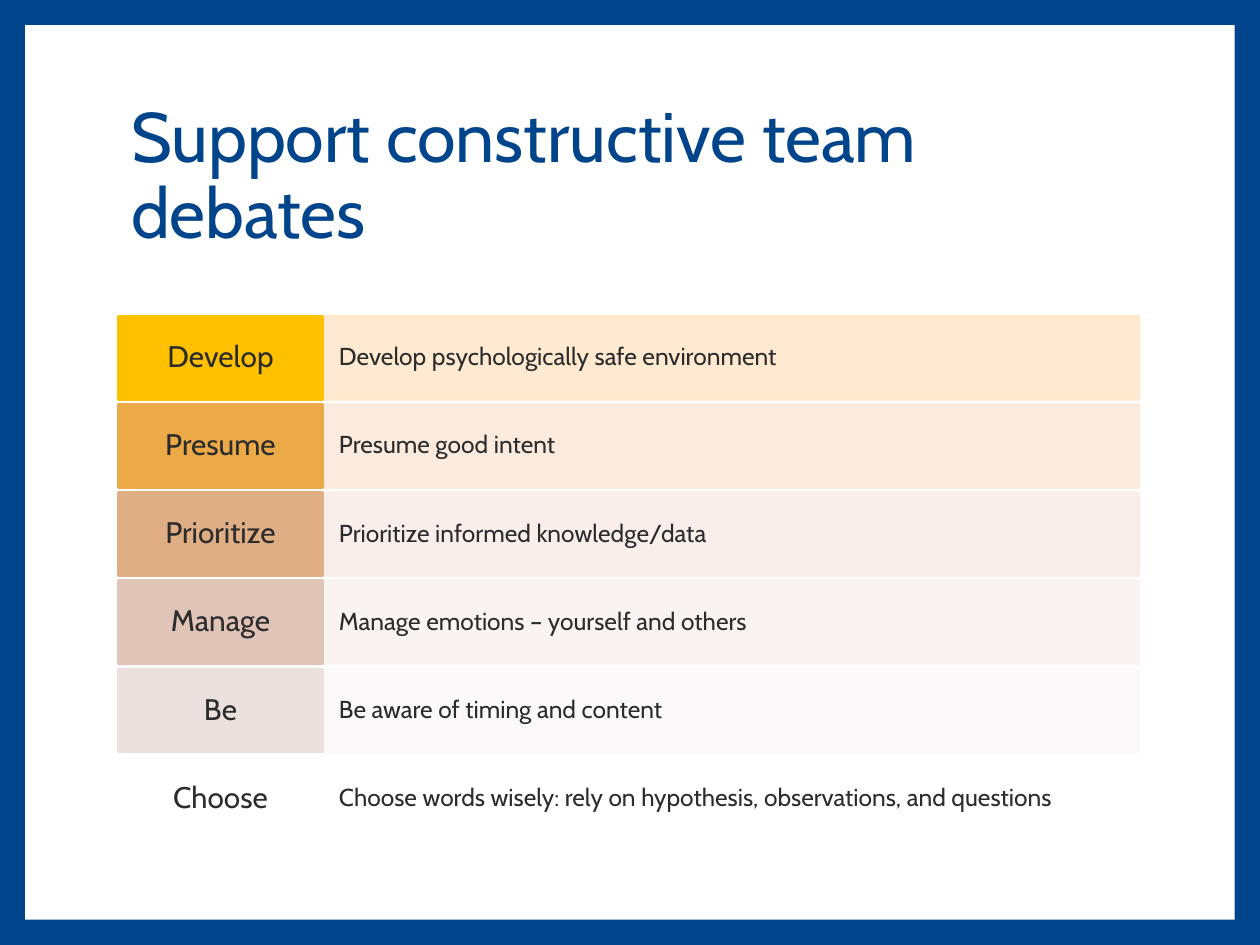
from lxml import etree
from pptx import Presentation
from pptx.dml.color import RGBColor
from pptx.enum.shapes import MSO_SHAPE
from pptx.enum.text import MSO_ANCHOR, PP_ALIGN
from pptx.oxml.ns import qn
from pptx.util import Inches, Pt

RECTANGLE = MSO_SHAPE.RECTANGLE
MIDDLE = MSO_ANCHOR.MIDDLE
LEFT, CENTER = PP_ALIGN.LEFT, PP_ALIGN.CENTER

COLORS = {"blue": "00458B", "white": "FFFFFF", "ink": "2C2C2C"}
PRACTICES = [
    ("Develop", "Develop psychologically safe environment", "FFC000", "FFE8CC"),
    ("Presume", "Presume good intent", "EBAA47", "FBE9DB"),
    ("Prioritize", "Prioritize informed knowledge/data", "E0AE85", "F9EDE7"),
    ("Manage", "Manage emotions – yourself and others", "E0C4B8", "F9F3F1"),
    ("Be", "Be aware of timing and content", "EBE2E0", "FBF9F9"),
    ("Choose", "Choose words wisely: rely on hypothesis, observations, and questions",
     COLORS["white"], COLORS["white"]),
]
MARGIN_LEFT, VERB_WIDTH, ADVICE_WIDTH = 0.94, 1.62, 6.48
ROWS_TOP, ROW_HEIGHT, ROW_PITCH = 2.51, 0.66, 0.7


class DebateSlide:
    """Holds the style and the current slide, and adds each kind of element."""

    font = "Cabin"

    def __init__(self, deck):
        self.slide = deck.slides.add_slide(deck.slide_layouts[5])

    def background(self, color):
        fill = self.slide.background.fill
        fill.solid()
        fill.fore_color.rgb = RGBColor.from_string(color)

    def set_text(self, frame, text, size, color, align, inset_x, inset_y):
        frame.word_wrap = True
        frame.vertical_anchor = MIDDLE
        frame.margin_left = frame.margin_right = Inches(inset_x)
        frame.margin_top = frame.margin_bottom = Inches(inset_y)
        paragraph = frame.paragraphs[0]
        paragraph.alignment = align
        paragraph.line_spacing = 0.9
        run = paragraph.add_run()
        run.text = text
        run.font.name = self.font
        run.font.size = Pt(size)
        run.font.color.rgb = RGBColor.from_string(color)

    def title(self, text, left, top, width, height):
        heading = self.slide.shapes.title
        heading.left, heading.top = Inches(left), Inches(top)
        heading.width, heading.height = Inches(width), Inches(height)
        self.set_text(heading.text_frame, text, 40, COLORS["blue"], LEFT, 0.1, 0.05)

    def panel(self, left, top, width, height, color):
        panel = self.slide.shapes.add_shape(
            RECTANGLE, Inches(left), Inches(top), Inches(width), Inches(height))
        panel.shadow.inherit = False
        panel.fill.solid()
        panel.fill.fore_color.rgb = RGBColor.from_string(color)
        panel.line.fill.background()
        return panel

    def cell(self, left, top, width, color, text, size, align, inset_x, inset_y, opacity=100):
        cell = self.panel(left, top, width, ROW_HEIGHT, color)
        cell.line.color.rgb = RGBColor.from_string(color)
        cell.line.width = Pt(1.5)
        if opacity < 100:
            for tint in cell.element.spPr.iter(qn("a:srgbClr")):
                etree.SubElement(tint, qn("a:alpha"), val=str(opacity * 1000))
        self.set_text(cell.text_frame, text, size, COLORS["ink"], align, inset_x, inset_y)


def main():
    deck = Presentation()
    deck.slide_width, deck.slide_height = Inches(10), Inches(7.5)
    page = DebateSlide(deck)
    page.background(COLORS["blue"])
    sheet = page.panel(0.2, 0.2, 9.6, 7.1, COLORS["white"])
    heading = page.slide.shapes.title
    heading.element.addprevious(sheet.element)
    page.title("Support constructive team debates",
               MARGIN_LEFT, 0.67, VERB_WIDTH + ADVICE_WIDTH, 1.48)

    for row, (verb, advice, verb_color, advice_color) in enumerate(PRACTICES):
        top = ROWS_TOP + row * ROW_PITCH
        page.cell(MARGIN_LEFT + VERB_WIDTH, top, ADVICE_WIDTH, advice_color,
                  advice, 14, LEFT, 0.13, 0.17, opacity=90)
        page.cell(MARGIN_LEFT, top, VERB_WIDTH, verb_color,
                  verb, 17, CENTER, 0.09, 0.07)

    deck.save("out.pptx")


if __name__ == "__main__":
    main()
